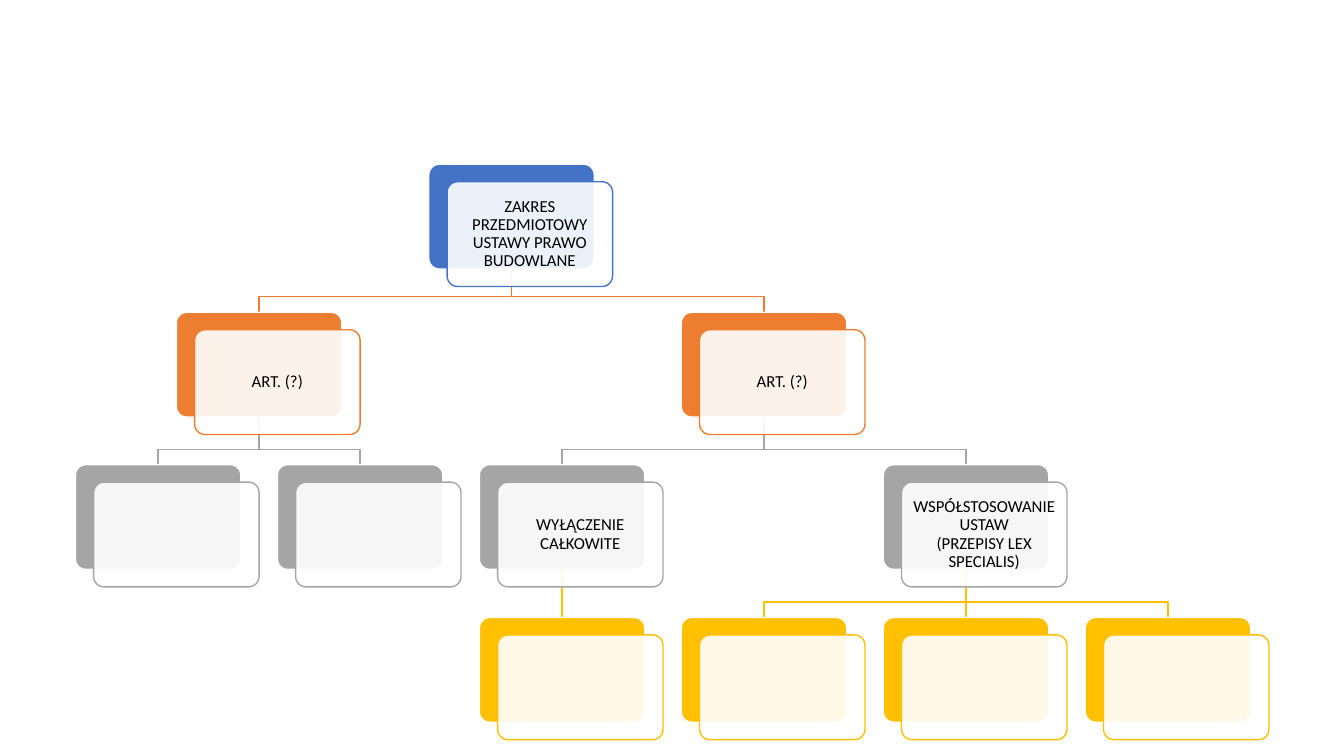
from lxml import etree
from pptx import Presentation
from pptx.dml.color import RGBColor
from pptx.enum import shapes, text
from pptx.oxml import ns
from pptx.util import Cm, Pt

BLANK = ("", [])
TREE = ("ZAKRES PRZEDMIOTOWY USTAWY PRAWO BUDOWLANE", [
    ("ART. (?)", [BLANK, BLANK]),
    ("ART. (?)", [
        ("WYŁĄCZENIE CAŁKOWITE", [BLANK]),
        ("WSPÓŁSTOSOWANIE USTAW\v(PRZEPISY LEX SPECIALIS)", [BLANK, BLANK, BLANK]),
    ]),
])

THEME = {
    "levels": ["4472C4", "ED7D31", "A5A5A5", "FFC000"],
    "paper": "FFFFFF", "ink": "000000",
    "font": "Calibri", "size": Pt(12), "line": Pt(1),
    "alpha": "90000", "round": 0.1,
}
LEFT, PITCH = 1.9, 5.09
TOPS = [4.14, 7.87, 11.71, 15.56]
WIDTH, HEIGHT = 4.17, 2.64
SHIFT_X, SHIFT_Y = 0.46, 0.44
RISE, INSET = 0.39, 0.13


def color(code):
    return RGBColor.from_string(code)


def apply(item, values):
    for name, value in values.items():
        setattr(item, name, value)


def place(node, level, slot, cards, links):
    label, kids = node
    spots = []
    for kid in kids:
        spot, slot = place(kid, level + 1, slot, cards, links)
        spots.append(spot)
    if kids:
        here = (spots[0] + spots[-1]) / 2
    else:
        here, slot = slot, slot + 1
    cards.append((level, here, label))
    links.extend((level, here, spot) for spot in spots)
    return here, slot


def center(spot):
    return LEFT + spot * PITCH + WIDTH / 2


def draw_link(slide, level, start, end):
    x, goal = center(start), center(end)
    y, base = TOPS[level] + HEIGHT, TOPS[level + 1]
    if x == goal:
        link = slide.shapes.add_connector(
            shapes.MSO_CONNECTOR.STRAIGHT, Cm(x), Cm(y), Cm(x), Cm(base))
        etree.SubElement(link._element.spPr, ns.qn("a:effectLst"))
    else:
        bend = base - RISE
        pen = slide.shapes.build_freeform(Cm(x), Cm(y))
        points = [(x, bend), (goal, bend), (goal, base)]
        pen.add_line_segments([(Cm(a), Cm(b)) for a, b in points], close=False)
        link = pen.convert_to_shape()
        link.fill.background()
        link.shadow.inherit = False
    link.line.color.rgb = color(THEME["levels"][level + 1])
    link.line.width = THEME["line"]


def draw_box(slide, x, y, fill, line):
    box = slide.shapes.add_shape(
        shapes.MSO_SHAPE.ROUNDED_RECTANGLE, Cm(x), Cm(y), Cm(WIDTH), Cm(HEIGHT))
    box.adjustments[0] = THEME["round"]
    box.shadow.inherit = False
    box.fill.solid()
    box.fill.fore_color.rgb = color(fill)
    box.line.color.rgb = color(line)
    box.line.width = THEME["line"]
    return box


def draw_card(slide, level, spot, label):
    x, y, tint = LEFT + spot * PITCH, TOPS[level], THEME["levels"][level]
    draw_box(slide, x, y, tint, THEME["paper"])
    front = draw_box(slide, x + SHIFT_X, y + SHIFT_Y, THEME["paper"], tint)
    shade = front._element.spPr.find(ns.qn("a:solidFill"))[0]
    etree.SubElement(shade, ns.qn("a:alpha"), val=THEME["alpha"])
    if not label:
        return
    frame = front.text_frame
    sides = ("left", "top", "right", "bottom")
    apply(frame, {f"margin_{side}": Cm(INSET) for side in sides})
    apply(frame, {"word_wrap": True, "vertical_anchor": text.MSO_ANCHOR.MIDDLE})
    para = frame.paragraphs[0]
    para.text = label
    apply(para, {"alignment": text.PP_ALIGN.CENTER, "line_spacing": 0.9})
    for run in para.runs:
        apply(run.font, {"name": THEME["font"], "size": THEME["size"]})
        run.font.color.rgb = color(THEME["ink"])


def main():
    deck = Presentation()
    apply(deck, {"slide_width": Cm(33.87), "slide_height": Cm(19.05)})
    slide = deck.slides.add_slide(deck.slide_layouts[6])
    cards, links = [], []
    place(TREE, 0, 0, cards, links)
    for link in links:
        draw_link(slide, *link)
    for card in cards:
        draw_card(slide, *card)
    deck.save("out.pptx")


if __name__ == "__main__":
    main()
